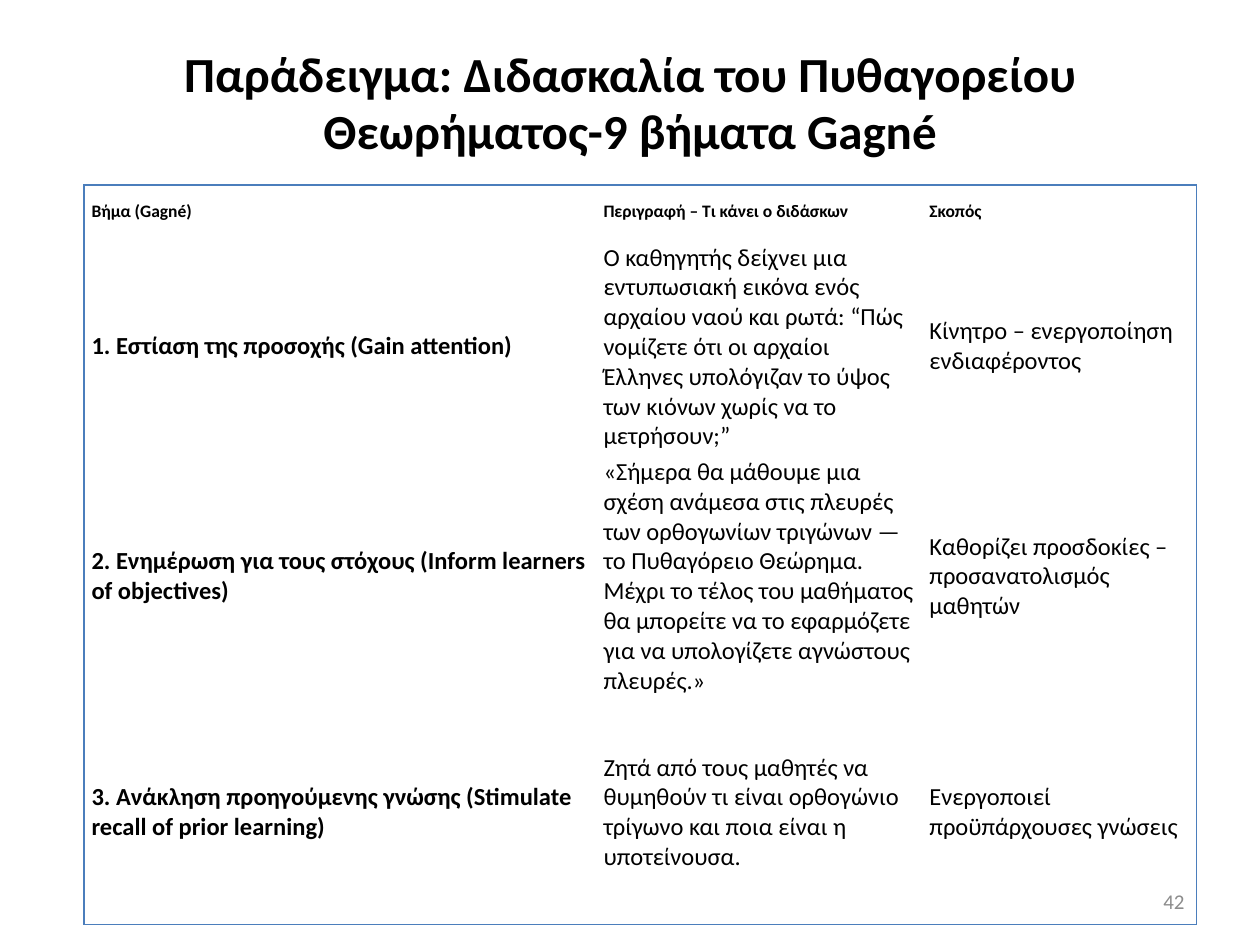
from lxml import etree
from pptx import Presentation, util as u
from pptx.dml.color import RGBColor
from pptx.enum import text
from pptx.oxml import ns

PX_PER_INCH = 126
BLACK = RGBColor(0x00, 0x00, 0x00)
GREY = RGBColor(0x8C, 0x8C, 0x8C)
BLUE = RGBColor(0x4B, 0x7E, 0xBC)

TITLE = "Παράδειγμα: Διδασκαλία του Πυθαγορείου Θεωρήματος-9 βήματα Gagné"
STEPS = [
    ("Βήμα (Gagné)", "Περιγραφή – Τι κάνει ο διδάσκων", "Σκοπός"),
    ("1. Εστίαση της προσοχής (Gain attention)",
     "Ο καθηγητής δείχνει μια εντυπωσιακή εικόνα ενός αρχαίου ναού και ρωτά: “Πώς νομίζετε "
     "ότι οι αρχαίοι Έλληνες υπολόγιζαν το ύψος των κιόνων χωρίς να το μετρήσουν;”",
     "Κίνητρο – ενεργοποίηση ενδιαφέροντος"),
    ("2. Ενημέρωση για τους στόχους (Inform learners of objectives)",
     "«Σήμερα θα μάθουμε μια σχέση ανάμεσα στις πλευρές των ορθογωνίων τριγώνων — το "
     "Πυθαγόρειο Θεώρημα. Μέχρι το τέλος του μαθήματος θα μπορείτε να το εφαρμόζετε για να "
     "υπολογίζετε αγνώστους πλευρές.»",
     "Καθορίζει προσδοκίες – προσανατολισμός μαθητών"),
    ("3. Ανάκληση προηγούμενης γνώσης (Stimulate recall of prior learning)",
     "Ζητά από τους μαθητές να θυμηθούν τι είναι ορθογώνιο τρίγωνο και ποια είναι η υποτείνουσα.",
     "Ενεργοποιεί προϋπάρχουσες γνώσεις"),
]
COLUMN_WIDTHS = [512, 326, 275]
ROW_HEIGHTS = [54, 188, 248, 224]


def px(n):
    return u.Emu(round(n * 914400 / PX_PER_INCH))


def write(tf, content, size=14, bold=False, color=BLACK, font="Calibri",
          align=text.PP_ALIGN.LEFT, spacing=None):
    p = tf.paragraphs[0]
    p.alignment = align
    p.line_spacing = spacing
    r = p.add_run()
    r.text = content
    r.font.name, r.font.size, r.font.bold = font, u.Pt(size), bold
    r.font.color.rgb = color


def set_borders(cell, drawn, color=BLUE, width=0.75):
    """Draw the cell sides named in drawn (from L, R, T, B) and clear the others."""
    tcPr = cell._tc.get_or_add_tcPr()
    for side in "LRTB":
        ln = etree.SubElement(tcPr, ns.qn(f"a:ln{side}"), w=str(u.Pt(width)))
        if side in drawn:
            fill = etree.SubElement(ln, ns.qn("a:solidFill"))
            etree.SubElement(fill, ns.qn("a:srgbClr"), val=str(color))
        else:
            etree.SubElement(ln, ns.qn("a:noFill"))


class SlideBuilder:
    def __init__(self, prs):
        self.s = prs.slides.add_slide(prs.slide_layouts[5])

    def title(self, content, x, y, w, h, bottom_inset):
        sp = self.s.shapes.title
        sp.left, sp.top, sp.width, sp.height = map(px, (x, y, w, h))
        tf = sp.text_frame
        tf.auto_size = text.MSO_AUTO_SIZE.NONE
        tf.vertical_anchor = text.MSO_ANCHOR.MIDDLE
        tf.margin_bottom = px(bottom_inset)
        write(tf, content, size=28, bold=True, align=text.PP_ALIGN.CENTER, spacing=0.96)

    def label(self, content, x, y, w, h, **style):
        tf = self.s.shapes.add_textbox(*map(px, (x, y, w, h))).text_frame
        tf.word_wrap = True
        tf.vertical_anchor = text.MSO_ANCHOR.MIDDLE
        write(tf, content, **style)

    def table(self, rows, x, y, h, widths, heights):
        """Add a table framed only around its outside."""
        sp = self.s.shapes.add_table(len(rows), len(widths), *map(px, (x, y, sum(widths), h)))
        table = sp.table
        table.first_row = table.horz_banding = False
        for column, width in zip(table.columns, widths):
            column.width = px(width)
        for row, height in zip(table.rows, heights):
            row.height = px(height)
        sp.height = px(h)
        last_row, last_column = len(rows) - 1, len(widths) - 1
        for i, row in enumerate(rows):
            for j, content in enumerate(row):
                cell = table.cell(i, j)
                cell.vertical_anchor = text.MSO_ANCHOR.MIDDLE
                cell.margin_left = cell.margin_right = u.Inches(0.06)
                cell.margin_top = cell.margin_bottom = u.Inches(0.03)
                outer = {"L": j == 0, "R": j == last_column, "T": i == 0, "B": i == last_row}
                set_borders(cell, [side for side, edge in outer.items() if edge])
                cell.fill.background()
                write(cell.text_frame, content, size=14 if i else 10, bold=i == 0 or j == 0)


def main():
    prs = Presentation()
    prs.slide_width, prs.slide_height = px(1260), px(945)
    slide = SlideBuilder(prs)
    slide.title(TITLE, 63, 45, 1134, 158, bottom_inset=46)
    slide.label("42", 903, 876, 294, 50, size=12, color=GREY, align=text.PP_ALIGN.RIGHT)
    slide.table(STEPS, 84, 185, 740, COLUMN_WIDTHS, ROW_HEIGHTS)
    prs.save("out.pptx")


if __name__ == "__main__":
    main()
